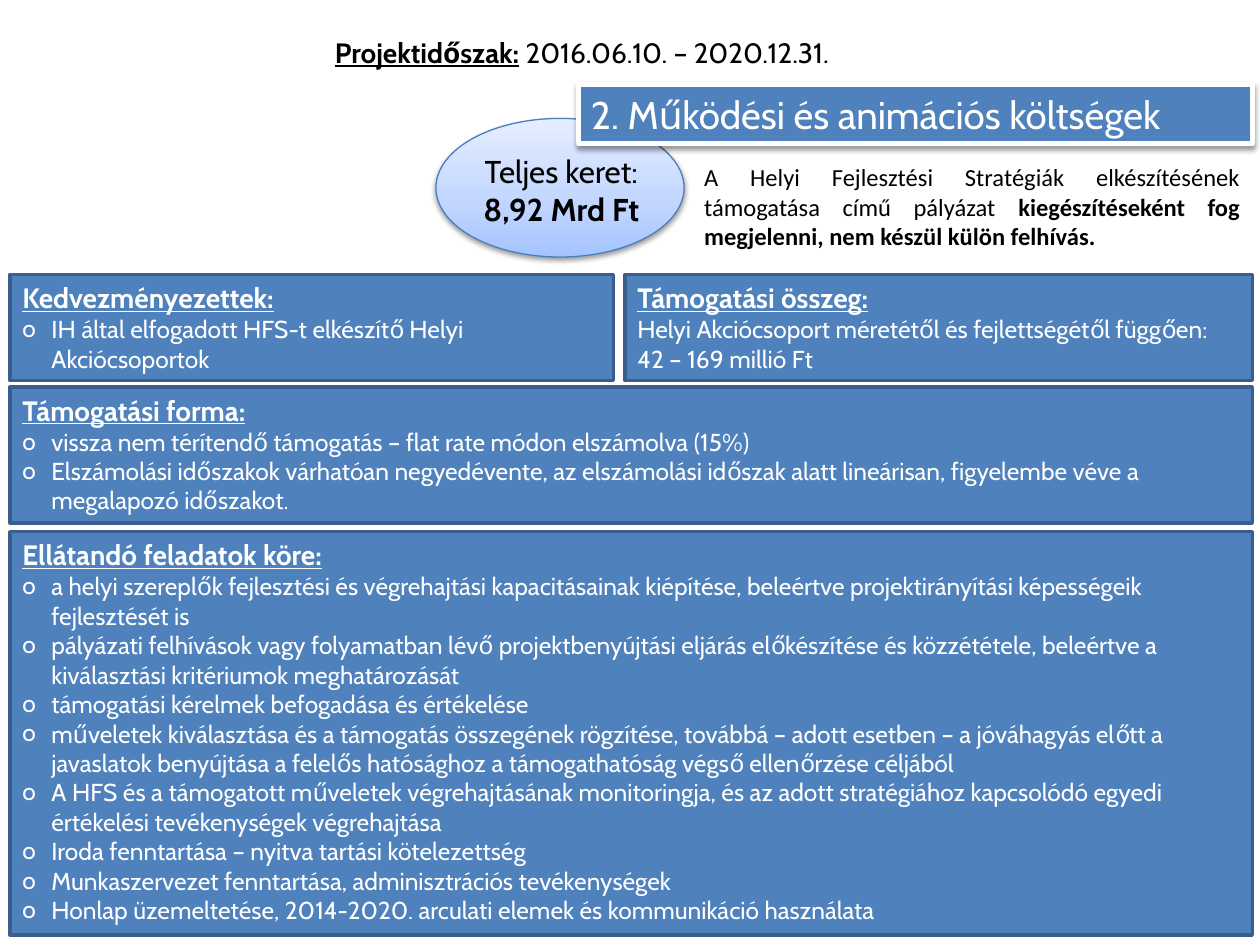
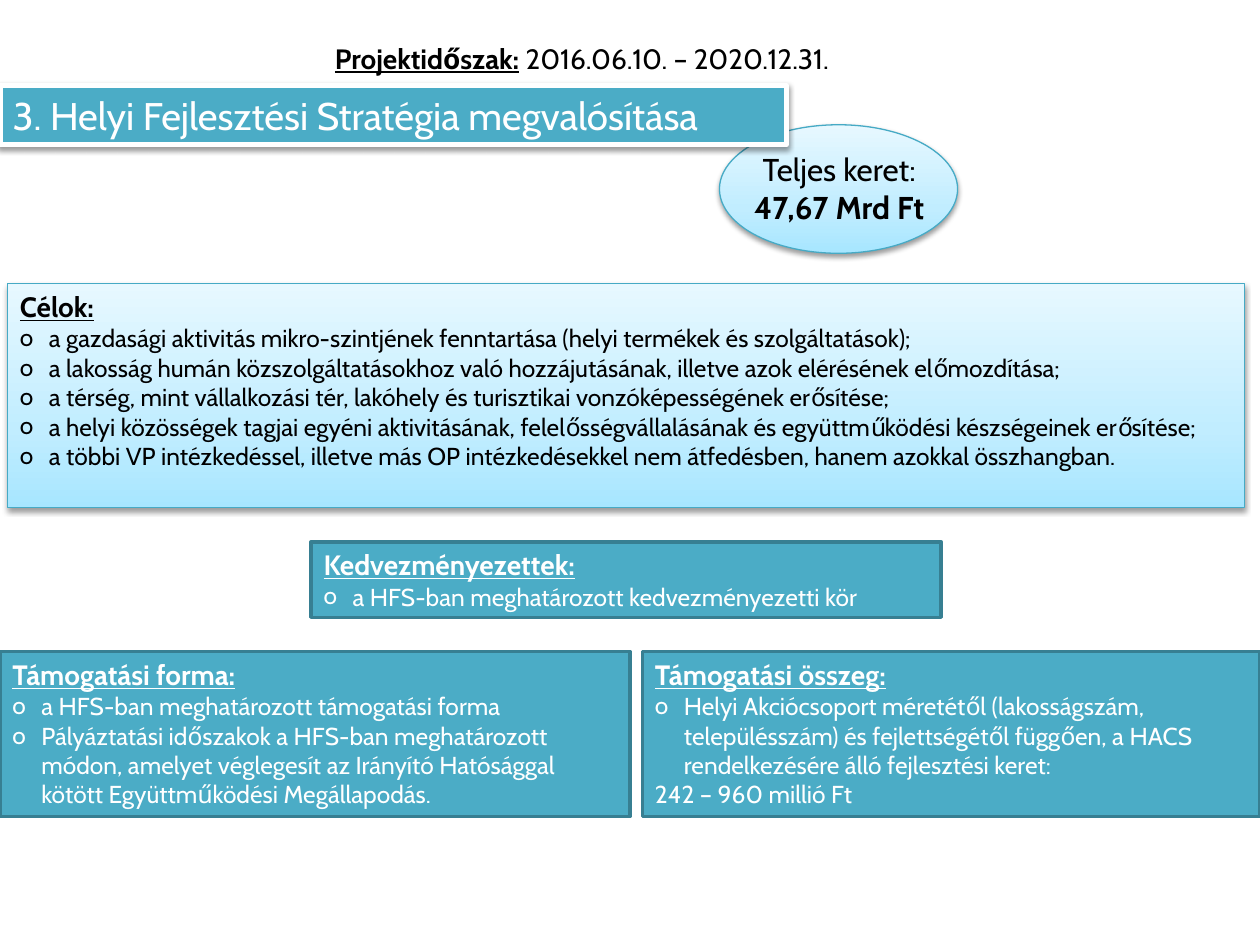
"""Build two slides on the funding of local development strategies."""
import lxml.etree
import pptx
import pptx.dml.color
import pptx.enum.shapes
import pptx.enum.text
import pptx.oxml.ns
import pptx.util

Inches = pptx.util.Inches
Pt = pptx.util.Pt
qn = pptx.oxml.ns.qn
ALIGN = pptx.enum.text.PP_ALIGN
SHAPES = pptx.enum.shapes.MSO_SHAPE

BLUE = {
    "fill": "4F81BD",
    "border": "3A5F8C",
    "outline": "4B7EBC",
    "gradient": [(0, "A4C4FF"), (35, "BFD4FF"), (100, "E6EEFF")],
}
TEAL = {
    "fill": "4BACC6",
    "border": "377F92",
    "outline": "46AAC5",
    "gradient": [(0, "A7E6FF"), (35, "C1EDFF"), (100, "E7F8FF")],
}
WHITE = "FFFFFF"
BLACK = "000000"
TITLE = {"name": "Cabin", "size": Pt(22), "bold": False}
BUDGET = {"name": "Cabin", "size": Pt(18)}
BUDGET_BOLD = {**BUDGET, "bold": True}
PERIOD = {"name": "Cabin", "size": Pt(16)}
HEADING = {**PERIOD, "bold": True, "underline": True}
BODY = {"name": "Cabin", "size": Pt(14)}
NOTE = {"name": "Calibri", "size": Pt(14)}
NOTE_BOLD = {**NOTE, "bold": True}
BULLET_INDENT = Inches(0.23)


def rgb(value):
    """Turn a hex string into a colour."""
    return pptx.dml.color.RGBColor.from_string(value)


def child(parent, tag, **attributes):
    """Append a DrawingML element."""
    return lxml.etree.SubElement(parent, qn(tag), attributes)


def set_line(shape, color, width):
    """Outline a shape."""
    shape.line.color.rgb = rgb(color)
    shape.line.width = Pt(width)


def set_solid(shape, color):
    """Fill a shape with one colour."""
    shape.fill.solid()
    shape.fill.fore_color.rgb = rgb(color)


def set_gradient(shape, stops):
    """Fill a shape with a gradient rising from the bottom."""
    shape.fill.gradient()
    shape.fill.gradient_angle = 90
    stop_list = shape._element.spPr.find(qn("a:gradFill")).find(qn("a:gsLst"))
    for stop in list(stop_list):
        stop_list.remove(stop)
    for position, color in stops:
        stop = child(stop_list, "a:gs", pos=str(position * 1000))
        child(stop, "a:srgbClr", val=color)


def set_shadow(shape):
    """Give a shape a soft shadow below."""
    shape.shadow.inherit = False
    effects = shape._element.spPr.find(qn("a:effectLst"))
    shadow = child(effects, "a:outerShdw", blurRad=str(Pt(3.1)), dist=str(Pt(1.6)),
                   dir="5400000", rotWithShape="0")
    color = child(shadow, "a:srgbClr", val=BLACK)
    child(color, "a:alpha", val="38000")


def add_bullet(paragraph):
    """Give a paragraph a hanging round bullet."""
    properties = paragraph._p.get_or_add_pPr()
    properties.set("marL", str(BULLET_INDENT))
    properties.set("indent", str(-BULLET_INDENT))
    child(properties, "a:buFont", typeface="Cabin")
    child(properties, "a:buChar", char="o")


def write(shape, paragraphs, color, alignment=ALIGN.LEFT):
    """Write paragraphs given as (runs, bulleted) pairs."""
    frame = shape.text_frame
    frame.word_wrap = True
    frame.auto_size = pptx.enum.text.MSO_AUTO_SIZE.NONE
    frame.vertical_anchor = pptx.enum.text.MSO_ANCHOR.TOP
    for index, (runs, bulleted) in enumerate(paragraphs):
        paragraph = frame.add_paragraph() if index else frame.paragraphs[0]
        paragraph.alignment = alignment
        if bulleted:
            add_bullet(paragraph)
        for text, font_format in runs:
            run = paragraph.add_run()
            run.text = text
            run.font.color.rgb = rgb(color)
            for name, value in font_format.items():
                setattr(run.font, name, value)


def add_shape(slide, kind, box):
    """Add a preset shape without a shadow."""
    shape = slide.shapes.add_shape(kind, *map(Inches, box))
    shape.shadow.inherit = False
    return shape


def add_text(slide, box, paragraphs, alignment=ALIGN.LEFT):
    """Add a black text box."""
    text_box = slide.shapes.add_textbox(*map(Inches, box))
    write(text_box, [(runs, False) for runs in paragraphs], BLACK, alignment)


def add_glow(slide, kind, box, palette):
    """Add a shape with a gradient and a shadow."""
    shape = add_shape(slide, kind, box)
    set_gradient(shape, palette["gradient"])
    set_line(shape, palette["outline"], 0.75)
    set_shadow(shape)
    return shape


def add_title(slide, box, text, palette):
    """Turn the title placeholder into a banner above earlier shapes."""
    title = slide.shapes.title
    title.left, title.top, title.width, title.height = map(Inches, box)
    set_solid(title, palette["fill"])
    set_line(title, WHITE, 3)
    set_shadow(title)
    write(title, [([(text, TITLE)], False)], WHITE)
    slide.shapes._spTree.append(title._element)


def add_budget(slide, box, amount):
    """Add the total budget label."""
    lines = [[("Teljes keret:", BUDGET)], [(amount, BUDGET_BOLD)]]
    add_text(slide, box, lines, ALIGN.CENTER)


def add_period(slide, top):
    """Add the project period line."""
    runs = [("Projektidőszak:", HEADING), (" 2016.06.10. – 2020.12.31.", PERIOD)]
    add_text(slide, (2.56, top, 4.62, 0.37), [runs])


def write_section(shape, heading, bullets, lines, color):
    """Write a heading, its bullets and any plain lines."""
    paragraphs = [([(heading, HEADING)], False)]
    paragraphs += [([(text, BODY)], True) for text in bullets]
    paragraphs += [([(text, BODY)], False) for text in lines]
    write(shape, paragraphs, color)


def add_card(slide, box, palette, heading, bullets=(), lines=()):
    """Add a solid section card."""
    card = add_shape(slide, SHAPES.RECTANGLE, box)
    set_solid(card, palette["fill"])
    set_line(card, palette["border"], 2)
    write_section(card, heading, bullets, lines, WHITE)


def build_operating_costs(slide):
    """Build the slide on operating and animation costs."""
    add_glow(slide, SHAPES.OVAL, (3.46, 0.94, 1.97, 1.1), BLUE)
    add_title(slide, (4.59, 0.67, 5.35, 0.47), "2. Működési és animációs költségek", BLUE)
    add_budget(slide, (3.68, 1.16, 1.55, 0.71), "8,92 Mrd Ft")
    note = [
        ("A Helyi Fejlesztési Stratégiák elkészítésének támogatása című pályázat ", NOTE),
        ("kiegészítéseként fog megjelenni, nem készül külön felhívás.", NOTE_BOLD),
    ]
    add_text(slide, (5.49, 1.24, 4.45, 0.81), [note], ALIGN.JUSTIFY)
    add_period(slide, 0.23)
    add_card(slide, (0.08, 2.18, 4.79, 0.84), BLUE, "Kedvezményezettek:",
             ["IH által elfogadott HFS-t elkészítő Helyi Akciócsoportok"])
    add_card(slide, (0.08, 3.07, 9.86, 1.08), BLUE, "Támogatási forma:", [
        "vissza nem térítendő támogatás – flat rate módon elszámolva (15%)",
        "Elszámolási időszakok várhatóan negyedévente, az elszámolási időszak alatt "
        "lineárisan, figyelembe véve a megalapozó időszakot.",
    ])
    add_card(slide, (4.96, 2.18, 4.98, 0.84), BLUE, "Támogatási összeg:", lines=[
        "Helyi Akciócsoport méretétől és fejlettségétől függően:",
        "42 – 169 millió Ft",
    ])
    add_card(slide, (0.08, 4.22, 9.86, 3.2), BLUE, "Ellátandó feladatok köre:", [
        "a helyi szereplők fejlesztési és végrehajtási kapacitásainak kiépítése, "
        "beleértve projektirányítási képességeik fejlesztését is",
        "pályázati felhívások vagy folyamatban lévő projektbenyújtási eljárás "
        "előkészítése és közzététele, beleértve a kiválasztási kritériumok meghatározását",
        "támogatási kérelmek befogadása és értékelése",
        "műveletek kiválasztása és a támogatás összegének rögzítése, továbbá – adott "
        "esetben – a jóváhagyás előtt a javaslatok benyújtása a felelős hatósághoz a "
        "támogathatóság végső ellenőrzése céljából",
        "A HFS és a támogatott műveletek végrehajtásának monitoringja, és az adott "
        "stratégiához kapcsolódó egyedi értékelési tevékenységek végrehajtása",
        "Iroda fenntartása – nyitva tartási kötelezettség",
        "Munkaszervezet fenntartása, adminisztrációs tevékenységek",
        "Honlap üzemeltetése, 2014-2020. arculati elemek és kommunikáció használata",
    ])


def build_strategy(slide):
    """Build the slide on carrying out the local strategy."""
    add_glow(slide, SHAPES.OVAL, (5.71, 0.99, 1.89, 1.02), TEAL)
    add_title(slide, (0, 0.68, 6.24, 0.47),
              "3. Helyi Fejlesztési Stratégia megvalósítása", TEAL)
    add_budget(slide, (5.82, 1.14, 1.68, 0.71), "47,67 Mrd Ft")
    add_period(slide, 0.28)
    add_card(slide, (2.47, 4.3, 5, 0.6), TEAL, "Kedvezményezettek:",
             ["a HFS-ban meghatározott kedvezményezetti kör"])
    add_card(slide, (0, 5.17, 5, 1.31), TEAL, "Támogatási forma:", [
        "a HFS-ban meghatározott támogatási forma",
        "Pályáztatási időszakok a HFS-ban meghatározott módon, amelyet véglegesít az "
        "Irányító Hatósággal kötött Együttműködési Megállapodás.",
    ])
    add_card(slide, (5.1, 5.17, 4.9, 1.31), TEAL, "Támogatási összeg:", [
        "Helyi Akciócsoport méretétől (lakosságszám, településszám) és fejlettségétől "
        "függően, a HACS rendelkezésére álló fejlesztési keret:",
    ], ["242 – 960 millió Ft"])
    goals = add_glow(slide, SHAPES.RECTANGLE, (0.06, 2.25, 9.82, 1.78), TEAL)
    write_section(goals, "Célok:", [
        "a gazdasági aktivitás mikro-szintjének fenntartása (helyi termékek és "
        "szolgáltatások);",
        "a lakosság humán közszolgáltatásokhoz való hozzájutásának, illetve azok "
        "elérésének előmozdítása;",
        "a térség, mint vállalkozási tér, lakóhely és turisztikai vonzóképességének "
        "erősítése;",
        "a helyi közösségek tagjai egyéni aktivitásának, felelősségvállalásának és "
        "együttműködési készségeinek erősítése;",
        "a többi VP intézkedéssel, illetve más OP intézkedésekkel nem átfedésben, "
        "hanem azokkal összhangban.",
    ], [], BLACK)


def main():
    """Create the presentation and save it."""
    presentation = pptx.Presentation()
    presentation.slide_width = Inches(10)
    presentation.slide_height = Inches(7.5)
    title_only = presentation.slide_layouts[5]
    for build in (build_operating_costs, build_strategy):
        build(presentation.slides.add_slide(title_only))
    presentation.save("out.pptx")


if __name__ == "__main__":
    main()
